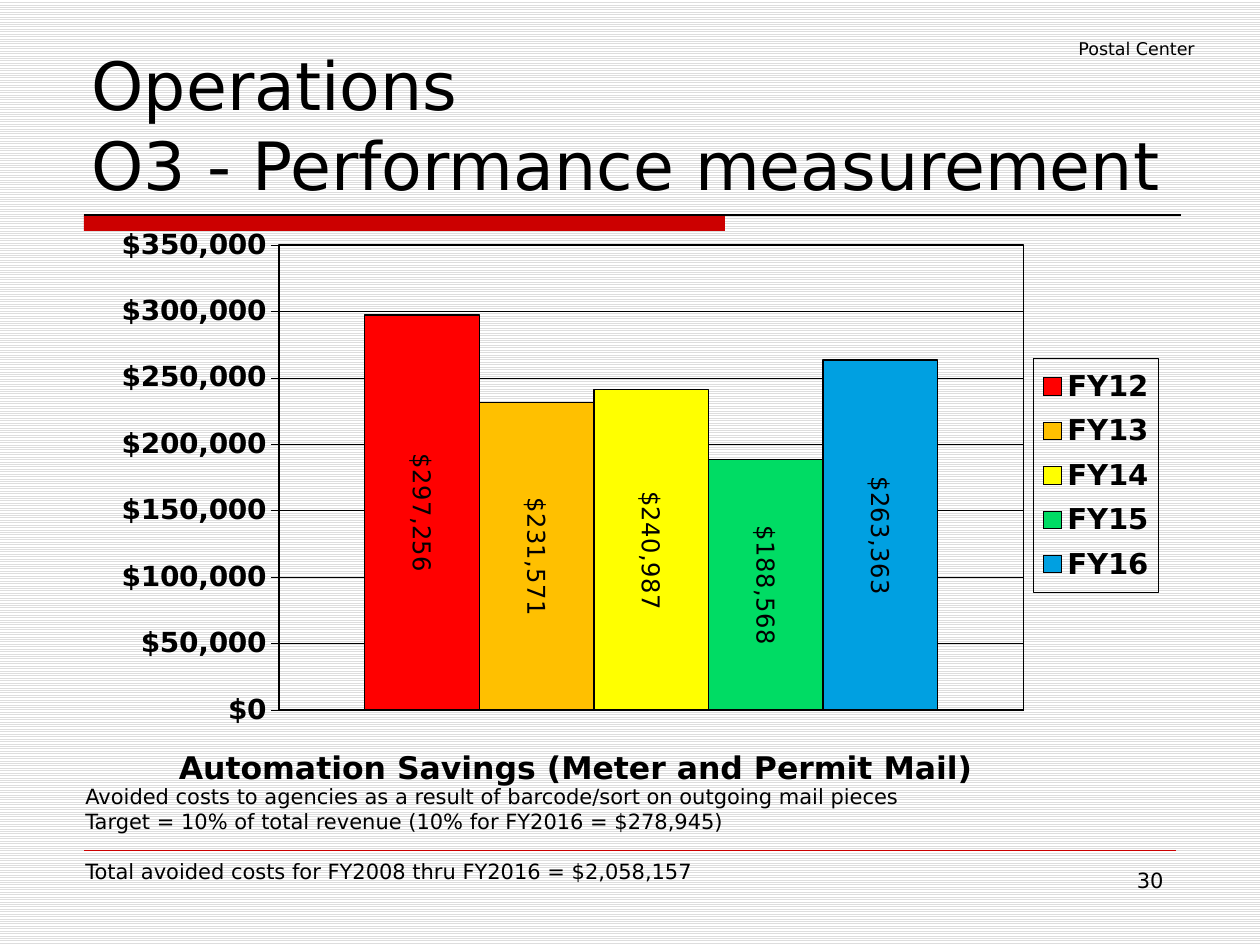
from lxml import etree
from pptx import Presentation
from pptx import util as u
from pptx.chart.data import CategoryChartData
from pptx.dml.color import RGBColor
from pptx.enum import chart as charts
from pptx.enum import dml, shapes, text
from pptx.oxml import parse_xml
from pptx.oxml.ns import nsdecls, qn

SCALE = 914400 / 126
FONT = "DejaVu Sans"
BLACK, RED = "000000", "CC0000"
MONEY = '"$"#,##0'

TITLE = ["Operations", "O3 - Performance measurement"]
CHART_TITLE = "Automation Savings (Meter and Permit Mail)"
SAVINGS = [
    ("FY12", 297256, "FF0000"),
    ("FY13", 231571, "FFC000"),
    ("FY14", 240987, "FFFF00"),
    ("FY15", 188568, "00DC64"),
    ("FY16", 263363, "00A0E1"),
]
# Text, space before in points
NOTES = [
    ("Avoided costs to agencies as a result of barcode/sort on outgoing mail pieces", 0),
    ("Target = 10% of total revenue (10% for FY2016 = $278,945)", 0),
    ("Total avoided costs for FY2008 thru FY2016 = $2,058,157", 14),
]
# Paragraphs, box in px, size in points, alignment
TEXT_BOXES = [
    ([("30", 0)], (903, 861, 273, 66), 12, text.PP_ALIGN.RIGHT),
    ([("Postal Center", 0)], (924, 32, 283, 34), 10, text.PP_ALIGN.RIGHT),
    (NOTES, (73, 777, 1144, 174), 12, text.PP_ALIGN.LEFT),
]
# Start, end, colour, width in points
RULES = [
    ((84, 215), (1181, 215), BLACK, 0.75),
    ((84, 850), (1176, 850), RED, 0.25),
]


def px(*values):
    return [u.Emu(round(value * SCALE)) for value in values]


def color(hex_code):
    return RGBColor.from_string(hex_code)


def set_font(font, size, bold=False):
    font.name, font.size, font.bold = FONT, u.Pt(size), bold
    font.color.rgb = color(BLACK)


def set_line(line, hex_code, width):
    line.color.rgb = color(hex_code)
    line.width = u.Pt(width)


def add_title(slide):
    title = slide.shapes.title
    title.left, title.top, title.width, title.height = px(79, 42, 1128, 168)
    frame = title.text_frame
    frame.auto_size = text.MSO_AUTO_SIZE.NONE
    frame.vertical_anchor = text.MSO_ANCHOR.BOTTOM
    paragraph = frame.paragraphs[0]
    paragraph.alignment = text.PP_ALIGN.LEFT
    for index, line in enumerate(TITLE):
        if index:
            paragraph.add_line_break()
        run = paragraph.add_run()
        run.text = line
        set_font(run.font, 38)


def add_text(slide, paragraphs, box, size, alignment):
    frame = slide.shapes.add_textbox(*px(*box)).text_frame
    frame.word_wrap = True
    for index, (words, space) in enumerate(paragraphs):
        paragraph = frame.add_paragraph() if index else frame.paragraphs[0]
        paragraph.alignment = alignment
        paragraph.space_before = u.Pt(space)
        run = paragraph.add_run()
        run.text = words
        set_font(run.font, size)


def add_rule(slide, start, end, hex_code, width):
    rule = slide.shapes.add_connector(shapes.MSO_CONNECTOR.STRAIGHT, *px(*start, *end))
    set_line(rule.line, hex_code, width)
    etree.SubElement(rule._element.spPr, qn("a:effectLst"))


def place(element, x, y, w=None, h=None, inner=False):
    """Give a chart part a manual layout, in fractions of the chart."""
    layout = element.find(qn("c:layout"))
    if layout is None:
        layout = etree.Element(qn("c:layout"))
        element.insert(0, layout)
    manual = etree.SubElement(layout, qn("c:manualLayout"))
    settings = [("layoutTarget", "inner")] if inner else []
    settings += [("xMode", "edge"), ("yMode", "edge"), ("x", x), ("y", y)]
    if w:
        settings += [("w", w), ("h", h)]
    for name, value in settings:
        etree.SubElement(manual, qn("c:" + name)).set("val", str(value))


def frame_properties(width):
    return parse_xml(
        f'<c:spPr {nsdecls("c", "a")}><a:noFill/><a:ln w="{u.Pt(width)}"><a:solidFill>'
        f'<a:srgbClr val="{BLACK}"/></a:solidFill></a:ln></c:spPr>'
    )


def add_savings_chart(slide):
    data = CategoryChartData(number_format=MONEY)
    data.categories = ["1"]
    for name, value, _ in SAVINGS:
        data.add_series(name, [value])
    chart = slide.shapes.add_chart(
        charts.XL_CHART_TYPE.COLUMN_CLUSTERED, *px(86, 199, 1089, 598), data
    ).chart
    set_font(chart.font, 18, True)

    chart.has_title = True
    run = chart.chart_title.text_frame.paragraphs[0].add_run()
    run.text = CHART_TITLE
    set_font(run.font, 18, True)
    place(chart.chart_title._element, 0.08, 0.92)

    chart.has_legend = True
    legend = chart.legend
    legend.position = charts.XL_LEGEND_POSITION.RIGHT
    legend.include_in_layout = False
    set_font(legend.font, 16.6, True)
    place(legend._element, 0.87, 0.27, 0.115, 0.397)
    legend._element.find(qn("c:overlay")).addnext(frame_properties(0.25))

    plot_area = chart._chartSpace.chart.plotArea
    place(plot_area, 0.177, 0.078, 0.684, 0.788, inner=True)
    plot_area.append(frame_properties(1))

    chart.category_axis.visible = False
    axis = chart.value_axis
    axis.minimum_scale, axis.maximum_scale, axis.major_unit = 0, 350000, 50000
    axis.major_tick_mark = charts.XL_TICK_MARK.OUTSIDE
    axis.tick_labels.number_format = MONEY
    axis.tick_labels.number_format_is_linked = False
    set_font(axis.tick_labels.font, 16, True)
    set_line(axis.format.line, BLACK, 0.25)
    set_line(axis.major_gridlines.format.line, BLACK, 0.25)

    plot = chart.plots[0]
    plot.gap_width, plot.overlap, plot.vary_by_categories = 150, 0, False
    for series, (_, _, fill) in zip(plot.series, SAVINGS):
        series.format.fill.solid()
        series.format.fill.fore_color.rgb = color(fill)
        set_line(series.format.line, BLACK, 0.75)
        labels = series.data_labels
        labels.show_value = True
        labels.number_format, labels.number_format_is_linked = MONEY, False
        labels.position = charts.XL_LABEL_POSITION.CENTER
        set_font(labels.font, 14)
        body = labels._element.find(qn("c:txPr")).find(qn("a:bodyPr"))
        body.set("rot", "5400000")
        body.set("vert", "horz")


def main():
    presentation = Presentation()
    presentation.slide_width, presentation.slide_height = px(1260, 945)
    slide = presentation.slides.add_slide(presentation.slide_layouts[5])
    background = slide.background.fill
    background.patterned()
    background.pattern = dml.MSO_PATTERN.LIGHT_HORIZONTAL
    background.fore_color.rgb = color("DDDDDD")
    background.back_color.rgb = color("FFFFFF")

    bar = slide.shapes.add_shape(shapes.MSO_SHAPE.RECTANGLE, *px(84, 215, 641, 16))
    bar.shadow.inherit = False
    bar.fill.solid()
    bar.fill.fore_color.rgb = color(RED)
    bar.line.fill.background()
    for rule in RULES:
        add_rule(slide, *rule)
    add_title(slide)
    for text_box in TEXT_BOXES:
        add_text(slide, *text_box)
    add_savings_chart(slide)
    presentation.save("out.pptx")


if __name__ == "__main__":
    main()
